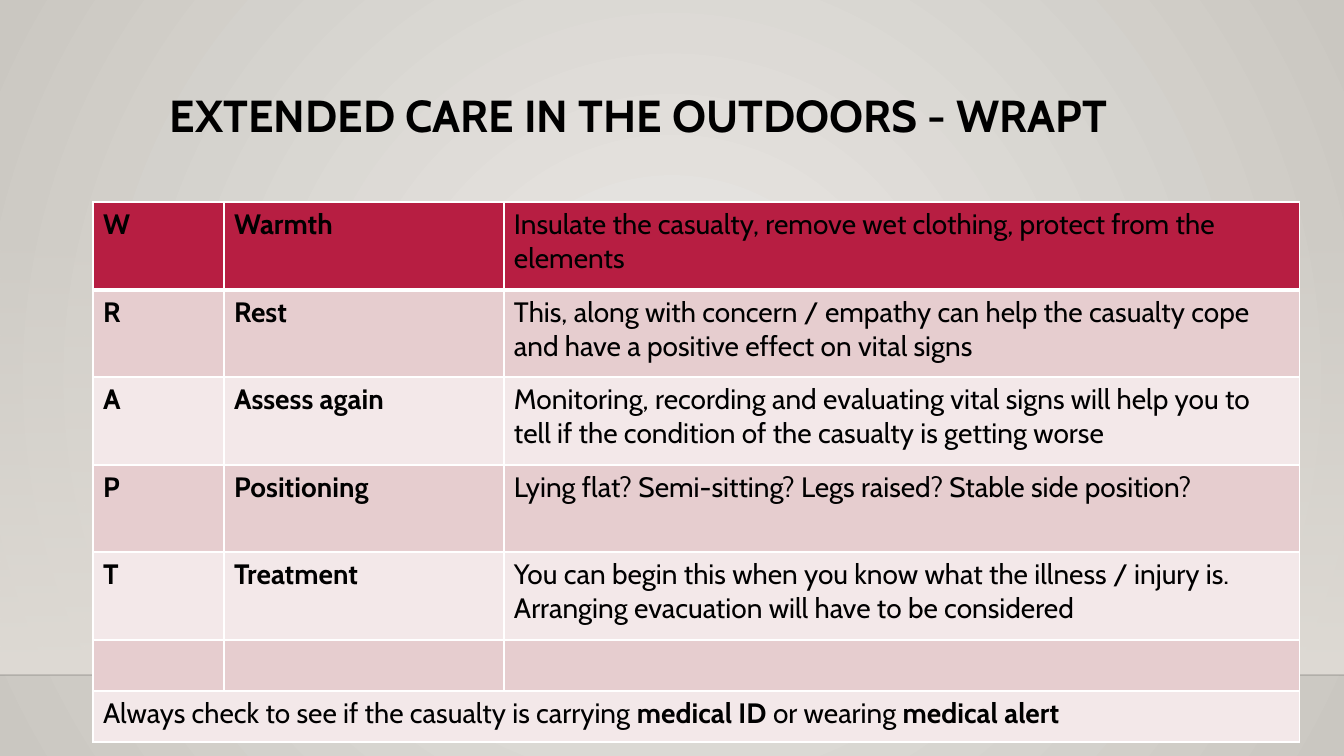
import pptx
import pptx.dml.color
import pptx.enum.shapes
import pptx.enum.text
import pptx.oxml
import pptx.oxml.ns
import pptx.util

RGB = pptx.dml.color.RGBColor
BLACK = RGB(0x00, 0x00, 0x00)
WHITE = RGB(0xFF, 0xFF, 0xFF)
CRIMSON = RGB(0xB7, 0x1E, 0x42)
ROSE = RGB(0xE6, 0xCD, 0xCF)
BLUSH = RGB(0xF3, 0xE8, 0xE9)
PALE_STONE = RGB(0xEC, 0xEA, 0xE7)
DARK_STONE = RGB(0xCA, 0xC7, 0xC1)
FLOOR_STONE = RGB(0xDF, 0xDB, 0xD5)

FONT = "Cabin"
SLIDE_W, SLIDE_H = 1344, 756
EMU_PER_PX = 12192000 / SLIDE_W

COLUMNS = [131, 280, 796]
ROWS = [88, 87, 88, 87, 88, 51, 51]
STEPS = [
    ("W", "Warmth", "Insulate the casualty, remove wet clothing, protect from the elements"),
    ("R", "Rest", "This, along with concern / empathy can help the casualty cope "
                  "and have a positive effect on vital signs"),
    ("A", "Assess again", "Monitoring, recording and evaluating vital signs will help you to "
                          "tell if the condition of the casualty is getting worse"),
    ("P", "Positioning", "Lying flat? Semi-sitting? Legs raised? Stable side position?"),
    ("T", "Treatment", "You can begin this when you know what the illness / injury is. "
                       "Arranging evacuation will have to be considered"),
]
REMINDER = [
    ("Always check to see if the casualty is carrying ", False),
    ("medical ID ", True),
    ("or wearing ", False),
    ("medical alert", True),
]


def px(length):
    return pptx.util.Emu(round(length * EMU_PER_PX))


def xml(markup):
    return pptx.oxml.parse_xml(markup.replace(">", " " + pptx.oxml.ns.nsdecls("a") + ">", 1))


def add_alpha(parent, percent):
    color = parent.find(".//" + pptx.oxml.ns.qn("a:srgbClr"))
    color.append(xml(f'<a:alpha val="{percent * 1000}"></a:alpha>'))


def set_gradient(fill, colors, direction):
    """Two-stop gradient; returns the gradient element."""
    fill.gradient()
    for stop, color in zip(fill.gradient_stops, colors):
        stop.color.rgb = color
    old = fill._fill._gradFill.find(pptx.oxml.ns.qn("a:lin"))
    gradient = old.getparent()
    gradient.replace(old, xml(direction))
    return gradient


def add_run(paragraph, text, size, bold):
    run = paragraph.add_run()
    run.text = text
    run.font.name = FONT
    run.font.size = pptx.util.Pt(size)
    run.font.bold = bold
    run.font.color.rgb = BLACK


def draw_backdrop(slide, floor_top, floor_line):
    # Radial glow
    set_gradient(slide.background.fill, (PALE_STONE, DARK_STONE),
                 '<a:path path="circle">'
                 '<a:fillToRect l="50000" t="50000" r="50000" b="50000"/></a:path>')

    # Haze fading in towards the floor
    haze = slide.shapes.add_shape(pptx.enum.shapes.MSO_SHAPE.RECTANGLE, 0, px(floor_top),
                                  px(SLIDE_W), px(floor_line - floor_top))
    haze.shadow.inherit = False
    haze.line.fill.background()
    gradient = set_gradient(haze.fill, (FLOOR_STONE, FLOOR_STONE),
                            '<a:lin ang="5400000" scaled="0"></a:lin>')
    add_alpha(gradient, 0)

    # Floor edge
    edge = slide.shapes.add_connector(pptx.enum.shapes.MSO_CONNECTOR.STRAIGHT, 0,
                                      px(floor_line), px(SLIDE_W), px(floor_line))
    edge.line.width = pptx.util.Pt(1)
    edge.line.color.rgb = BLACK
    properties = edge._element.spPr
    add_alpha(properties, 20)
    properties.append(xml("<a:effectLst></a:effectLst>"))


def draw_title(slide, left, top, width, height):
    title = slide.shapes.add_textbox(px(left), px(top), px(width), px(height))
    frame = title.text_frame
    frame.word_wrap = True
    frame.vertical_anchor = pptx.enum.text.MSO_ANCHOR.TOP
    heading = frame.paragraphs[0]
    heading.line_spacing = 0.9
    add_run(heading, "EXTENDED CARE IN THE OUTDOORS - WRAPT", 32, True)


def style_cell(cell, color, top, bottom):
    cell.fill.solid()
    cell.fill.fore_color.rgb = color
    properties = cell._tc.get_or_add_tcPr()
    for place, (side, points) in enumerate((("L", 1), ("R", 1), ("T", top), ("B", bottom))):
        properties.insert(place, xml(
            f'<a:ln{side} w="{pptx.util.Pt(points)}"><a:solidFill>'
            f'<a:srgbClr val="{WHITE}"/></a:solidFill></a:ln{side}>'))


def draw_wrapt_table(slide, left, top):
    table = slide.shapes.add_table(len(ROWS), len(COLUMNS), px(left), px(top),
                                   px(sum(COLUMNS)), px(sum(ROWS))).table
    for column, width in zip(table.columns, COLUMNS):
        column.width = px(width)

    # Row heights, bands and borders
    for index, (row, height) in enumerate(zip(table.rows, ROWS)):
        row.height = px(height)
        color = CRIMSON if index == 0 else ROSE if index % 2 else BLUSH
        for cell in row.cells:
            style_cell(cell, color, 3 if index == 1 else 1, 3 if index == 0 else 1)

    # Letter, step and advice
    for index, step in enumerate(STEPS):
        for column, text in enumerate(step):
            paragraph = table.cell(index, column).text_frame.paragraphs[0]
            add_run(paragraph, text, 20, column < 2)

    # Reminder across the last row
    last = len(ROWS) - 1
    reminder = table.cell(last, 0)
    reminder.merge(table.cell(last, len(COLUMNS) - 1))
    for text, bold in REMINDER:
        add_run(reminder.text_frame.paragraphs[0], text, 20, bold)


def main():
    deck = pptx.Presentation()
    deck.slide_width, deck.slide_height = px(SLIDE_W), px(SLIDE_H)
    slide = deck.slides.add_slide(deck.slide_layouts[6])
    draw_backdrop(slide, 223, 675)
    draw_title(slide, 160, 89, 1058, 116)
    draw_wrapt_table(slide, 93, 202)
    deck.save("out.pptx")


if __name__ == "__main__":
    main()
